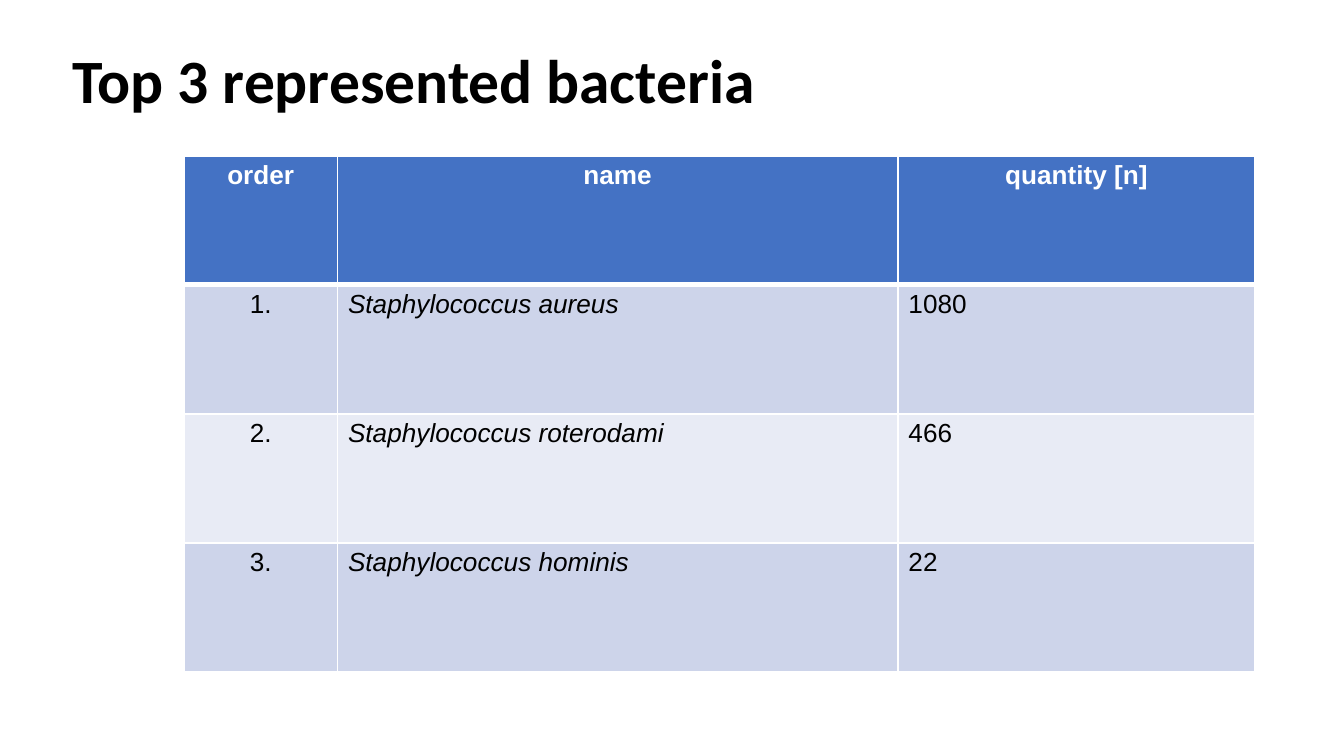
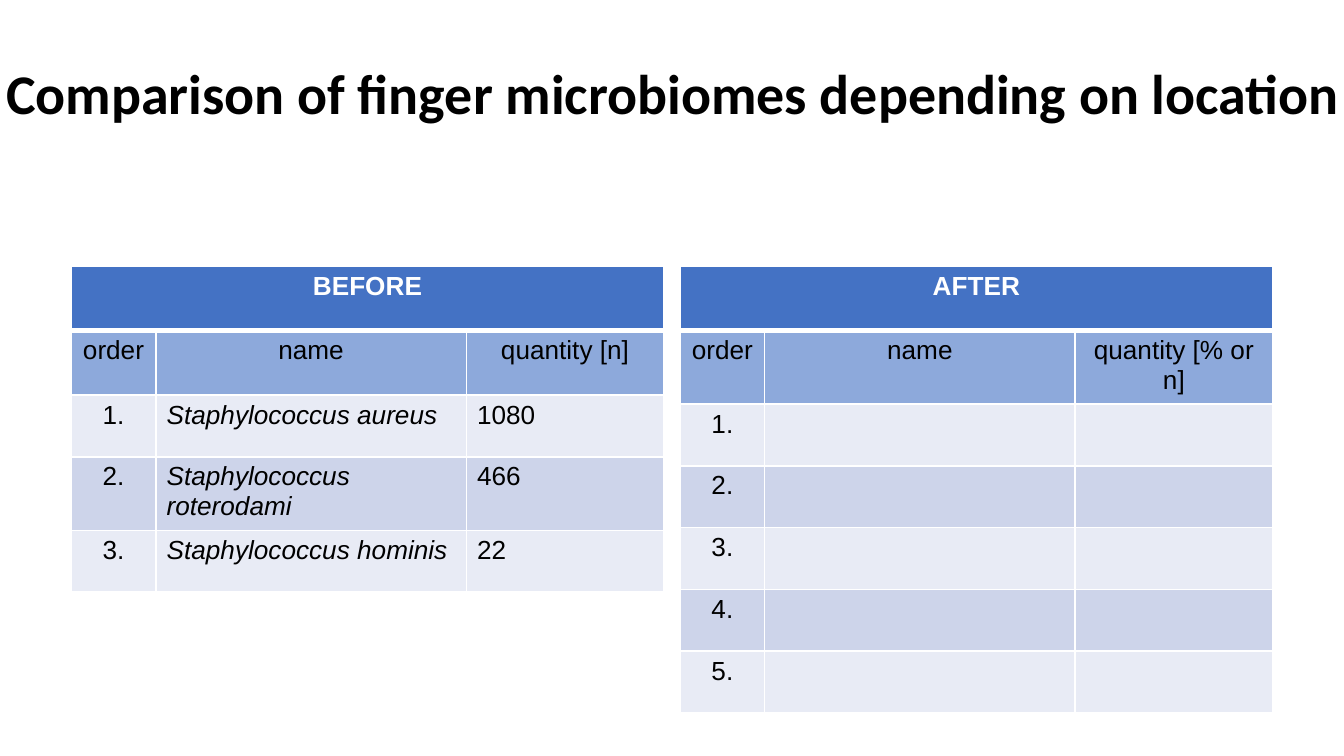
"""Build two slides of tables on the bacteria found on fingers."""
import lxml.etree
import pptx
import pptx.dml.color
import pptx.enum.text
import pptx.oxml.ns
import pptx.util

Inches = pptx.util.Inches
Align = pptx.enum.text.PP_ALIGN
BLACK, WHITE = "000000", "FFFFFF"
HEADER, SUBHEADER = "4472C4", "8DA9DB"
BANDS = ["E8EBF5", "CDD4EA"]
BACTERIA = [
    ["1.", "Staphylococcus aureus", "1080"],
    ["2.", "Staphylococcus roterodami", "466"],
    ["3.", "Staphylococcus hominis", "22"],
]


def color(value):
    return pptx.dml.color.RGBColor.from_string(value)


def write(para, text, font, size, ink, bold=False, italic=False):
    span = para.add_run()
    span.text = text
    span.font.name = font
    span.font.size = pptx.util.Pt(size)
    span.font.color.rgb = color(ink)
    span.font.bold = bold
    span.font.italic = italic


deck = pptx.Presentation()
deck.slide_width = Inches(10)
deck.slide_height = deck.slide_width * 9 // 16

titles = [
    ("Top 3 represented bacteria", 0.47, 0.08, 9.75, 33, Align.LEFT),
    ("Comparison of finger microbiomes depending on location", -0.22, 0.17, 10.46, 30, Align.CENTER),
]
for title, left, top, width, size, align in titles:
    slide = deck.slides.add_slide(deck.slide_layouts[6])
    box = slide.shapes.add_textbox(Inches(left), Inches(top), Inches(width), Inches(1.09))
    frame = box.text_frame
    frame.word_wrap = True
    frame.vertical_anchor = pptx.enum.text.MSO_ANCHOR.MIDDLE
    frame.margin_left = frame.margin_right = Inches(0.07)
    frame.margin_top = frame.margin_bottom = Inches(0.04)
    para = frame.paragraphs[0]
    para.alignment = align
    para.line_spacing = 0.9
    write(para, title, "Calibri", size, BLACK, bold=True)

top_columns, top_heights = [1.14, 4.17, 2.66], [0.96] * 4
half_columns = [0.63, 2.31, 1.47]
before = [["BEFORE", "", ""], ["order", "name", "quantity [n]"]] + BACTERIA
after = [["AFTER", "", ""], ["order", "name", "quantity [% or n]"]]
after += [[f"{order}.", "", ""] for order in range(1, 6)]
tables = [
    (0, 1.37, 1.16, top_columns, top_heights, [["order", "name", "quantity [n]"]] + BACTERIA),
    (1, 0.53, 1.98, half_columns, [0.48] * 2 + [0.46] * 3, before),
    (1, 5.06, 1.98, half_columns, [0.48] * 2 + [0.46] * 5, after),
]

for slide_index, left, top, widths, heights, rows in tables:
    holder = deck.slides[slide_index].shapes.add_table(
        len(rows), len(widths), Inches(left), Inches(top), Inches(3.28), Inches(3.28))
    table = holder.table
    for column, width in zip(table.columns, widths):
        column.width = Inches(width)
    grouped = rows[0][1] == ""
    if grouped:
        table.cell(0, 0).merge(table.cell(0, len(widths) - 1))
    for row_index, row in enumerate(rows):
        table.rows[row_index].height = Inches(heights[row_index])
        is_header = row_index == 0
        is_subheader = grouped and row_index == 1
        fill = HEADER if is_header else SUBHEADER if is_subheader else BANDS[row_index % 2]
        for column_index, text in enumerate(row):
            cell = table.cell(row_index, column_index)
            cell.margin_left = cell.margin_right = Inches(0.08)
            cell.margin_top = cell.margin_bottom = Inches(0.04)
            properties = cell._tc.get_or_add_tcPr()
            for side in "LRTB":
                if side == "T" and row_index == 1:
                    continue
                weight = 3 if is_header and side == "B" else 1
                line = lxml.etree.SubElement(
                    properties, pptx.oxml.ns.qn(f"a:ln{side}"), w=str(pptx.util.Pt(weight)))
                paint = lxml.etree.SubElement(line, pptx.oxml.ns.qn("a:solidFill"))
                lxml.etree.SubElement(paint, pptx.oxml.ns.qn("a:srgbClr"), val=WHITE)
            cell.fill.solid()
            cell.fill.fore_color.rgb = color(fill)
            if not text:
                continue
            is_heading = is_header or is_subheader
            para = cell.text_frame.paragraphs[0]
            para.alignment = Align.CENTER if is_heading or column_index == 0 else Align.LEFT
            write(para, text, "Arial", 14, WHITE if is_header else BLACK,
                  bold=is_header, italic=column_index == 1 and not is_heading)
    holder.width = holder.height = Inches(3.28)

deck.save("out.pptx")
